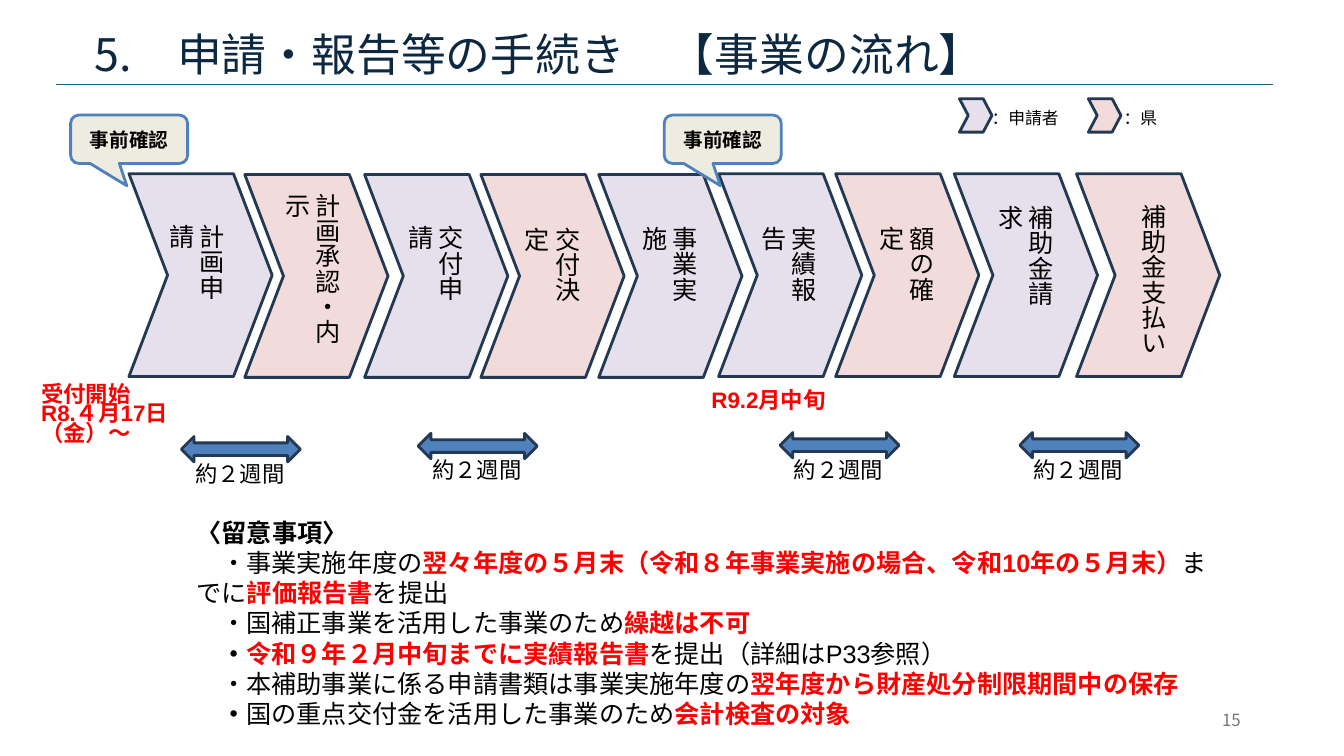
"""Build the slide showing the flow of the subsidy application and reporting steps."""
from lxml.etree import SubElement
from pptx import Presentation
from pptx.dml.color import RGBColor
from pptx.enum.shapes import MSO_CONNECTOR, MSO_SHAPE
from pptx.enum.text import MSO_ANCHOR, MSO_AUTO_SIZE, PP_ALIGN
from pptx.oxml.ns import qn
from pptx.util import Cm, Pt

COLORS = {
    "applicant": "E6E0EC", "prefecture": "F2DCDB", "outline": "233953",
    "arrow": "4F81BD", "callout": "EEECE1", "title": "0D2841", "rule": "155F82",
    "black": "000000", "red": "FF0000", "gray": "767676",
}
GOTHIC = "Noto Sans CJK JP"

TITLE = "5.　申請・報告等の手続き　【事業の流れ】"
PAGE_NUMBER = "15"
# Each step: label, actor, chevron left and top, label left, top and height
STEPS = [
    ("計画申請", "applicant", 3.25, 4.38, 4.55, 5.41, 2.97),
    ("計画承認・内示", "prefecture", 6.17, 4.4, 7.47, 4.62, 4.9),
    ("交付申請", "applicant", 9.19, 4.4, 10.57, 5.44, 2.97),
    ("交付決定", "prefecture", 12.12, 4.4, 13.51, 5.48, 2.97),
    ("事業実施", "applicant", 15.09, 4.4, 16.48, 5.46, 2.97),
    ("実績報告", "applicant", 18.11, 4.38, 19.48, 5.46, 2.97),
    ("額の確定", "prefecture", 21.06, 4.38, 22.45, 5.46, 2.97),
    ("補助金請求", "applicant", 24.05, 4.38, 25.45, 4.93, 3.51),
    ("補助金支払い", "prefecture", 27.13, 4.38, 28.3, 4.9, 4.35),
]
LEGEND = [("：申請者", "applicant", 24.18, 24.74), ("：県", "prefecture", 27.43, 28.07)]
CALLOUT = "事前確認"
CALLOUT_LEFTS = [1.78, 16.74]
PERIOD = "約２週間"
PERIOD_PLACES = [(4.57, 11), (10.54, 10.92), (19.66, 10.9), (25.7, 10.9)]
DATES = [
    (["受付開始", "R8.４月17日（金）～"], (0.79, 9.63, 5.38, 1.24)),
    (["R9.2月中旬"], (17.68, 9.78, 4.9, 0.76)),
]
NOTES_HEADING = ("〈", "留意事項〉")
# Each note: spans of text, color and bold
NOTES = [
    [("・事業実施年度の", "black", False),
     ("翌々年度の５月末（令和８年事業実施の場合、令和10年の５月末）", "red", True),
     ("までに", "black", False), ("評価報告書", "red", True), ("を提出", "black", False)],
    [("・国補正事業を活用した事業のため", "black", False), ("繰越は不可", "red", True)],
    [("・", "black", True), ("令和９年２月中旬までに実績報告書", "red", True),
     ("を提出（詳細はP33参照）", "black", False)],
    [("・本補助事業に係る申請書類は事業実施年度の", "black", False),
     ("翌年度から財産処分制限期間中の保存", "red", True)],
    [("・", "black", True), ("国の重点交付金を活用した事業のため", "black", False),
     ("会計検査の対象", "red", True)],
]


def rgb(name):
    return RGBColor.from_string(COLORS[name])


def write(para, text, font=GOTHIC, size=18, color="black", bold=False):
    span = para.add_run()
    span.text = text
    span.font.name = font
    span.font.size = Pt(size)
    span.font.bold = bold
    span.font.color.rgb = rgb(color)
    SubElement(span.font._element, qn("a:ea")).set("typeface", font)


def add_text(page, lines, place, spacing=None, vertical=False, margins=None,
             **style):
    box = page.shapes.add_textbox(*map(Cm, place))
    frame = box.text_frame
    frame.word_wrap = True
    if vertical:
        frame._txBody.bodyPr.set("vert", "eaVert")
    if margins is not None:
        frame.margin_left = frame.margin_right = Cm(margins)
        frame.margin_top = frame.margin_bottom = Cm(margins)
    for index, line in enumerate(lines):
        para = frame.add_paragraph() if index else frame.paragraphs[0]
        if spacing:
            para.line_spacing = Pt(spacing)
        write(para, line, **style)


def add_figure(page, kind, place, fill, line="outline", adjustments=()):
    figure = page.shapes.add_shape(kind, *map(Cm, place))
    figure.shadow.inherit = False
    figure.fill.solid()
    figure.fill.fore_color.rgb = rgb(fill)
    figure.line.color.rgb = rgb(line)
    figure.line.width = Pt(2)
    for index, value in enumerate(adjustments):
        figure.adjustments[index] = value
    return figure


def add_heading(page):
    title = page.shapes.title
    title.left, title.top, title.width, title.height = map(Cm, (2.39, 0.66, 26.82, 1.4))
    frame = title.text_frame
    frame.margin_left = frame.margin_right = frame.margin_top = frame.margin_bottom = 0
    frame.vertical_anchor = MSO_ANCHOR.MIDDLE
    frame.auto_size = MSO_AUTO_SIZE.NONE
    frame.paragraphs[0].alignment = PP_ALIGN.LEFT
    write(frame.paragraphs[0], TITLE, size=32, color="title")
    rule = page.shapes.add_connector(
        MSO_CONNECTOR.STRAIGHT, Cm(1.4), Cm(2.13), Cm(32.08), Cm(2.13))
    rule.line.color.rgb = rgb("rule")
    rule.line.width = Pt(1)
    SubElement(rule._element.spPr, qn("a:effectLst"))


def add_notes_list(page):
    body = page.placeholders[1]
    body.left, body.top, body.width, body.height = map(Cm, (4.7, 12.9, 26.04, 5.64))
    frame = body.text_frame
    frame.auto_size = MSO_AUTO_SIZE.NONE
    for index in range(len(NOTES) + 1):
        para = frame.add_paragraph() if index else frame.paragraphs[0]
        para.space_before = Pt(0)
        properties = para._p.get_or_add_pPr()
        properties.set("marL", "0")
        properties.set("indent", str(Cm(0.62) if index else 0))
        SubElement(properties, qn("a:buNone"))
        if index == 0:
            write(para, NOTES_HEADING[0], bold=True)
            write(para, NOTES_HEADING[1], font="Arial", bold=True)
            continue
        for text, color, bold in NOTES[index - 1]:
            write(para, text, font="Arial", color=color, bold=bold)


def main():
    deck = Presentation()
    deck.slide_width, deck.slide_height = Cm(33.87), Cm(19.05)
    page = deck.slides.add_slide(deck.slide_layouts[1])
    add_heading(page)
    add_text(page, [PAGE_NUMBER], (30.8, 17.91, 0.8, 0.53), spacing=13.9,
             margins=0, size=12, color="gray")

    for label, actor, left, top, label_left, label_top, label_height in STEPS:
        add_figure(page, MSO_SHAPE.CHEVRON, (left, top, 3.61, 5.11), actor,
                   adjustments=[0.27])
        add_text(page, [label], (label_left, label_top, 1.28, label_height),
                 vertical=True)
    for label, actor, left, label_left in LEGEND:
        add_figure(page, MSO_SHAPE.CHEVRON, (left, 2.49, 0.82, 0.84), actor,
                   adjustments=[0.27])
        add_text(page, [label], (label_left, 2.59, 3.07, 0.76), size=12)

    for left in CALLOUT_LEFTS:
        callout = add_figure(page, MSO_SHAPE.ROUNDED_RECTANGULAR_CALLOUT,
                             (left, 2.9, 2.95, 1.22), "callout", line="arrow",
                             adjustments=[-0.02, 0.96, 0.17])
        callout.text_frame.vertical_anchor = MSO_ANCHOR.MIDDLE
        para = callout.text_frame.paragraphs[0]
        para.alignment = PP_ALIGN.CENTER
        write(para, CALLOUT, font="Calibri", size=14, bold=True)

    for left, top in PERIOD_PLACES:
        add_text(page, [PERIOD], (left + 0.1, top + 0.46, 3.07, 0.94), size=16)
        add_figure(page, MSO_SHAPE.LEFT_RIGHT_ARROW, (left, top, 3, 0.64), "arrow")

    add_notes_list(page)
    for lines, place in DATES:
        add_text(page, lines, place, spacing=14, font="Arial", size=16,
                 color="red", bold=True)
    deck.save("out.pptx")


if __name__ == "__main__":
    main()
